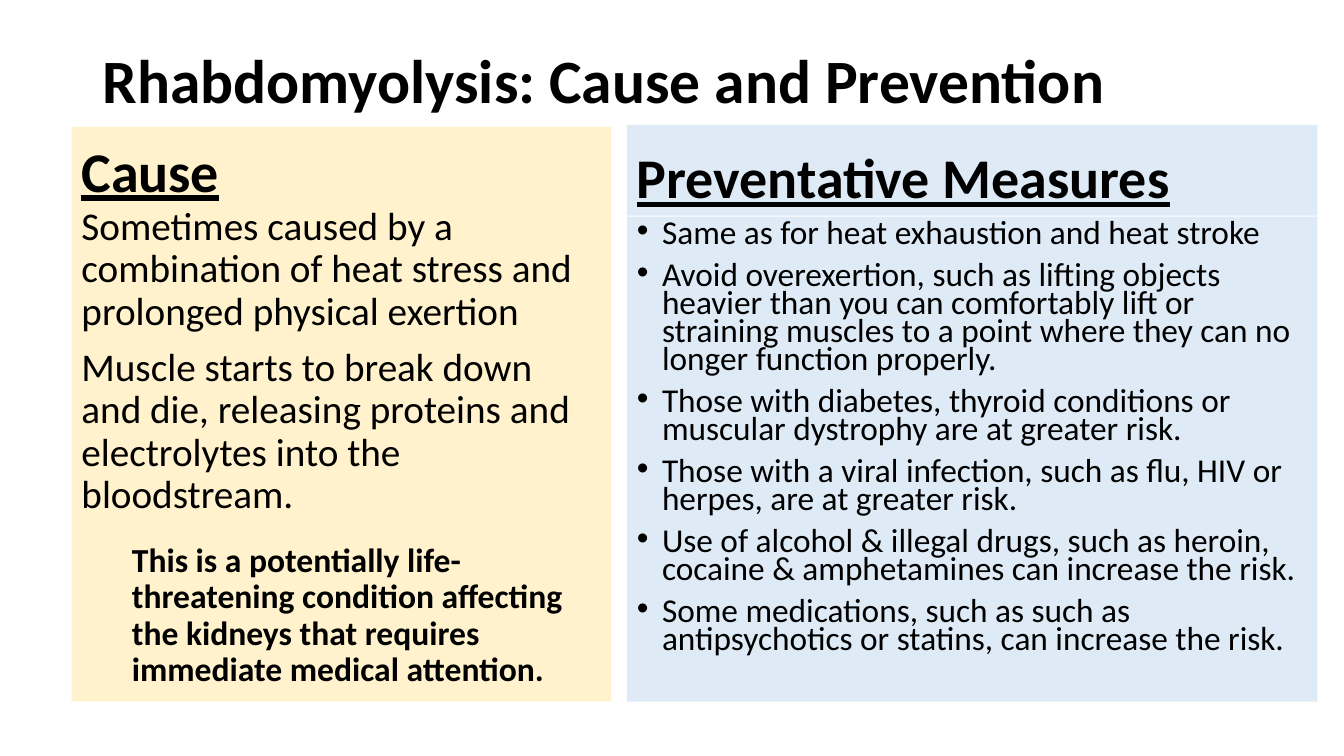
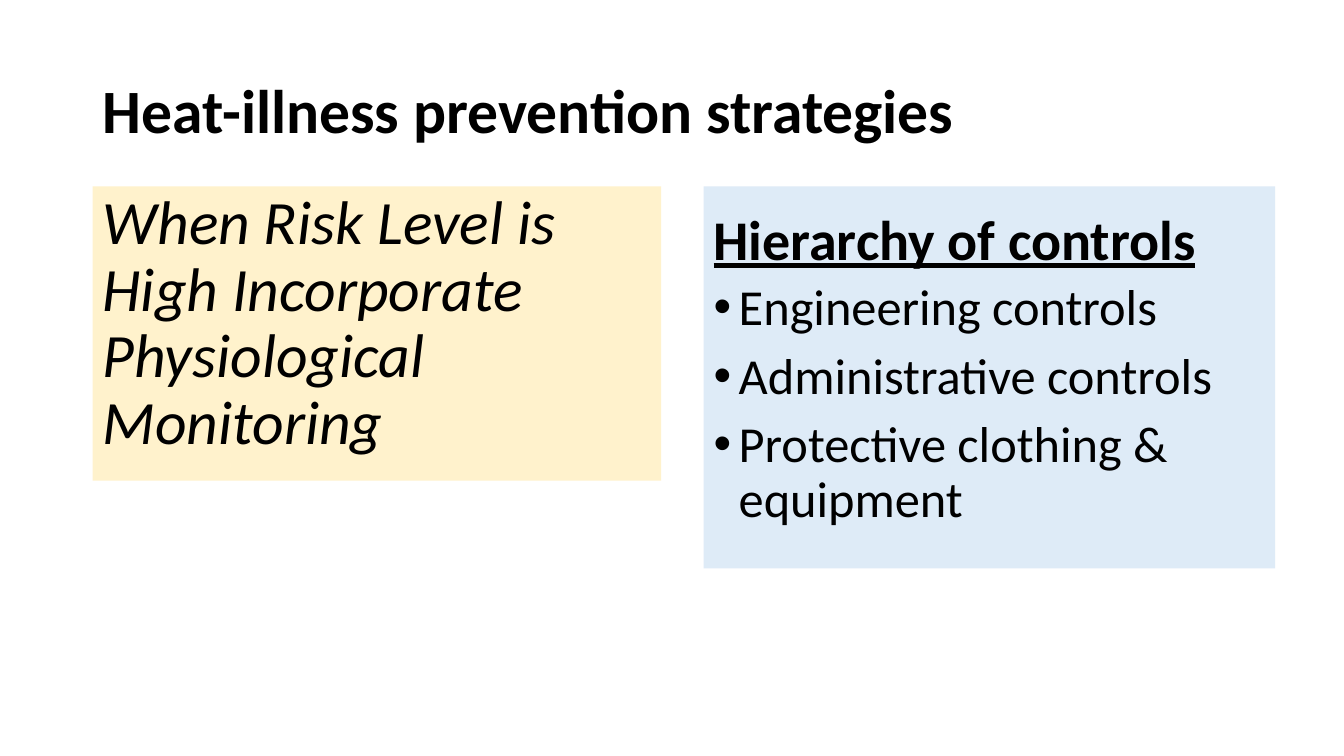
from lxml import etree
from pptx import Presentation
from pptx.dml.color import RGBColor
from pptx.enum.shapes import MSO_SHAPE
from pptx.enum.text import MSO_ANCHOR, MSO_AUTO_SIZE, PP_ALIGN
from pptx.oxml.ns import qn
from pptx.util import Pt

RECTANGLE = MSO_SHAPE.RECTANGLE
TOP, MIDDLE, BOTTOM = MSO_ANCHOR.TOP, MSO_ANCHOR.MIDDLE, MSO_ANCHOR.BOTTOM
LEFT = PP_ALIGN.LEFT
NO_AUTOFIT = MSO_AUTO_SIZE.NONE

# Shared style
BLACK = RGBColor(0x00, 0x00, 0x00)
CREAM = RGBColor(0xFF, 0xF2, 0xCC)
PALE_BLUE = RGBColor(0xDE, 0xEB, 0xF7)
FONT = "Calibri"
TITLE_SIZE = 44
HEADING_SIZE = 40
TITLE_LEFT, TITLE_TOP, TITLE_WIDTH = 66.2, 28.8, 828
BULLET_INDENT = 18
TITLE_ONLY = 5

# Content
CAUSES = [
    "Sometimes caused by a combination of heat stress and prolonged physical exertion",
    "Muscle starts to break down and die, releasing proteins and electrolytes into the bloodstream.",
]
WARNING = ("This is a potentially life-threatening condition affecting the kidneys "
           "that requires immediate medical attention.")
MEASURES = [
    "Same as for heat exhaustion and heat stroke",
    "Avoid overexertion, such as lifting objects heavier than you can comfortably lift "
    "or straining muscles to a point where they can no longer function properly.",
    "Those with diabetes, thyroid conditions or muscular dystrophy are at greater risk.",
    "Those with a viral infection, such as flu, HIV or herpes, are at greater risk.",
    "Use of alcohol & illegal drugs, such as heroin, cocaine & amphetamines can increase the risk.",
    "Some medications, such as such as antipsychotics or statins, can increase the risk.",
]
CONTROLS = ["Engineering controls", "Administrative controls", "Protective clothing & equipment"]


def prepare_frame(frame, anchor):
    frame.word_wrap = True
    frame.auto_size = NO_AUTOFIT
    frame.vertical_anchor = anchor


def style_paragraph(paragraph, size, bold=False, italic=False, underline=False,
                    line_spacing=0.9, before=10):
    paragraph.alignment = LEFT
    paragraph.line_spacing = line_spacing
    paragraph.space_before = Pt(before)
    font = paragraph.font
    font.name, font.size, font.color.rgb = FONT, Pt(size), BLACK
    font.bold, font.italic, font.underline = bold, italic, underline


def set_indent(paragraph, left, first_line=0):
    properties = paragraph._p.get_or_add_pPr()
    properties.set("marL", str(Pt(left)))
    properties.set("indent", str(Pt(first_line)))
    return properties


def add_bullet(paragraph):
    properties = set_indent(paragraph, BULLET_INDENT, -BULLET_INDENT)
    bullet_font = etree.Element(qn("a:buFont"), typeface="Arial")
    bullet = etree.Element(qn("a:buChar"), char="•")
    # Bullet elements stand before the default run properties
    run_defaults = properties.find(qn("a:defRPr"))
    run_defaults.addprevious(bullet_font)
    run_defaults.addprevious(bullet)


def add_title_slide(prs, title_text, title_height):
    slide = prs.slides.add_slide(prs.slide_layouts[TITLE_ONLY])
    title = slide.shapes.title
    title.left, title.top = Pt(TITLE_LEFT), Pt(TITLE_TOP)
    title.width, title.height = Pt(TITLE_WIDTH), Pt(title_height)
    title.text_frame.text = title_text
    prepare_frame(title.text_frame, MIDDLE)
    style_paragraph(title.text_frame.paragraphs[0], TITLE_SIZE, bold=True, before=0)
    return slide


def add_panel(slide, box, color, texts, size, anchor=TOP, bulleted=False, **style):
    panel = slide.shapes.add_shape(RECTANGLE, *(Pt(length) for length in box))
    panel.shadow.inherit = False
    panel.fill.solid()
    panel.fill.fore_color.rgb = color
    panel.line.fill.background()
    frame = panel.text_frame
    prepare_frame(frame, anchor)
    frame.text = "\n".join(texts)
    for paragraph in frame.paragraphs:
        style_paragraph(paragraph, size, **style)
        if bulleted:
            add_bullet(paragraph)
    return frame


def add_heading(slide, box, color, text):
    add_panel(slide, box, color, [text], HEADING_SIZE, BOTTOM, bold=True, underline=True)


def add_rhabdomyolysis_slide(prs):
    slide = add_title_slide(prs, "Rhabdomyolysis: Cause and Prevention", 61.2)

    # Cause column
    add_heading(slide, (51.1, 90.7, 385.2, 59), CREAM, "Cause")
    cause = add_panel(slide, (51.1, 144, 385.2, 357.1), CREAM, CAUSES, 28)
    warning = cause.add_paragraph()
    warning.text = WARNING
    style_paragraph(warning, 24, bold=True, before=19)
    set_indent(warning, 36)

    # Prevention column
    add_heading(slide, (447.8, 89.3, 493.2, 64.8), PALE_BLUE, "Preventative Measures")
    add_panel(slide, (447.8, 154.8, 493.2, 346.3), PALE_BLUE, MEASURES, 23.8,
              bulleted=True, line_spacing=0.7)


def add_strategies_slide(prs):
    slide = add_title_slide(prs, "Heat-illness prevention strategies", 104.4)

    # Monitoring advice
    add_panel(slide, (66.2, 133.2, 406.1, 210.2), CREAM,
              ["When Risk Level is High Incorporate Physiological Monitoring"], 44, italic=True)

    # Controls column
    add_heading(slide, (502.6, 133.2, 408.2, 64.8), PALE_BLUE, "Hierarchy of controls")
    add_panel(slide, (502.6, 198, 408.2, 208.1), PALE_BLUE, CONTROLS, 36, bulleted=True)


def main():
    prs = Presentation()
    prs.slide_width, prs.slide_height = Pt(960), Pt(540)
    add_rhabdomyolysis_slide(prs)
    add_strategies_slide(prs)
    prs.save("out.pptx")


if __name__ == "__main__":
    main()
